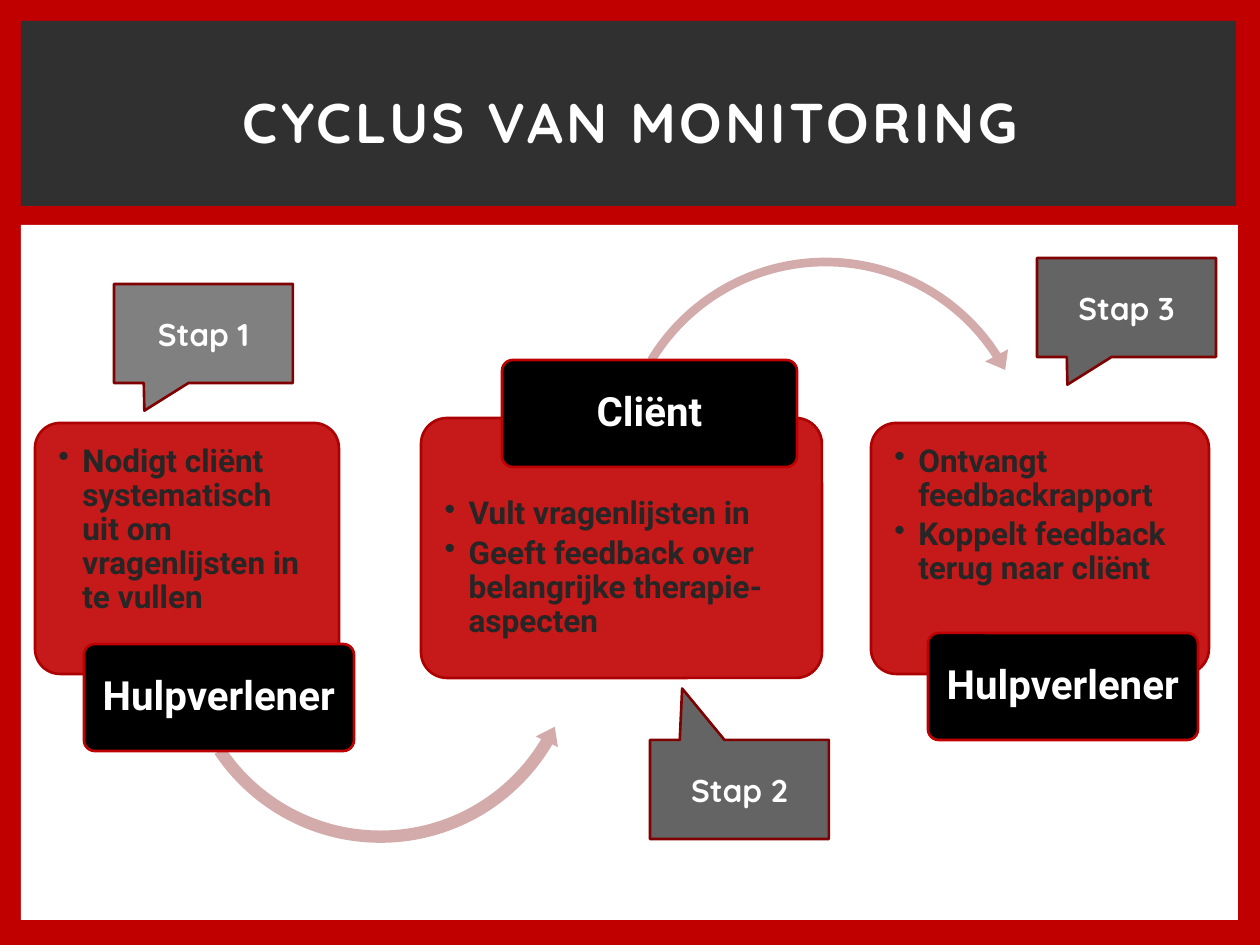
from lxml import etree
from pptx import Presentation
from pptx import util as u
from pptx.dml.color import RGBColor
from pptx.enum import shapes, text
from pptx.oxml.ns import qn

EMU_PER_PX = 914400 / 126

RED = RGBColor(0xC0, 0x00, 0x00)
PANEL_EDGE = RGBColor(0xAD, 0x01, 0x01)
CALLOUT_EDGE = RGBColor(0x80, 0x01, 0x01)
PINK = RGBColor(0xD3, 0xAB, 0xAB)
WHITE = RGBColor(0xFF, 0xFF, 0xFF)
BLACK = RGBColor(0x00, 0x00, 0x00)
CHARCOAL = RGBColor(0x30, 0x30, 0x30)
INK = RGBColor(0x26, 0x26, 0x26)
GREY = RGBColor(0x80, 0x80, 0x80)
DARK_GREY = RGBColor(0x64, 0x64, 0x64)

HEADING_FONT = "Quicksand"
BODY_FONT = "Roboto"
SHAPE = shapes.MSO_SHAPE


def px(length):
    return u.Emu(round(length * EMU_PER_PX))


class CycleSlide:
    def __init__(self, slide):
        self.slide = slide
        slide.background.fill.solid()
        slide.background.fill.fore_color.rgb = RED

    def shape(self, preset, box, fill, edge=None, adjustments=()):
        item = self.slide.shapes.add_shape(preset, *map(px, box))
        item.shadow.inherit = False
        item.fill.solid()
        item.fill.fore_color.rgb = fill
        if edge is None:
            item.line.fill.background()
        else:
            item.line.color.rgb = edge
            item.line.width = u.Pt(1.5)
        for index, value in enumerate(adjustments):
            item.adjustments[index] = value
        return item

    def label(self, item, lines, font, size, color, insets=(6, 4, 6, 4),
              align=text.PP_ALIGN.CENTER, anchor=text.MSO_ANCHOR.MIDDLE):
        """Fill a shape with one paragraph per line and return the paragraphs."""
        frame = item.text_frame
        frame.word_wrap = True
        frame.vertical_anchor = anchor
        (frame.margin_left, frame.margin_top,
         frame.margin_right, frame.margin_bottom) = map(px, insets)
        frame.text = "\n".join(lines)
        for paragraph in frame.paragraphs:
            paragraph.alignment = align
            paragraph.font.name = font
            paragraph.font.size = u.Pt(size)
            paragraph.font.bold = True
            paragraph.font.color.rgb = color
        return frame.paragraphs

    def title(self, box, words):
        item = self.slide.shapes.add_textbox(*map(px, box))
        heading, = self.label(item, [words], HEADING_FONT, 32, WHITE)
        heading.font._rPr.set("spc", "200")

    def panel(self, box, tasks, top_inset=15):
        """Draw a translucent red panel with a bulleted task list."""
        item = self.shape(SHAPE.ROUNDED_RECTANGLE, box, RED, PANEL_EDGE, [0.1])
        color = item.fill._xPr.find(qn("a:solidFill")).find(qn("a:srgbClr"))
        etree.SubElement(color, qn("a:alpha"), val="90000")
        paragraphs = self.label(item, tasks, BODY_FONT, 18, INK, (16, top_inset, 16, 15),
                                text.PP_ALIGN.LEFT, text.MSO_ANCHOR.TOP)
        for paragraph in paragraphs:
            paragraph.line_spacing = 0.9
            paragraph.space_after = u.Pt(3)
            properties = paragraph._p.get_or_add_pPr()
            properties.set("marL", str(px(24)))
            properties.set("indent", str(-px(24)))
            bullet = etree.Element(qn("a:buChar"), char="•")
            properties.find(qn("a:defRPr")).addprevious(bullet)

    def role(self, box, name):
        item = self.shape(SHAPE.ROUNDED_RECTANGLE, box, BLACK, RED, [0.1])
        caption, = self.label(item, [name], BODY_FONT, 23, WHITE)
        caption.line_spacing = 0.9

    def arc(self, preset, box, adjustments):
        self.shape(preset, box, PINK, adjustments=adjustments)

    def step(self, left, top, number, fill, pointer):
        item = self.shape(SHAPE.RECTANGULAR_CALLOUT, (left, top, 179, 99),
                          fill, CALLOUT_EDGE, pointer)
        self.label(item, [f"Stap {number}"], HEADING_FONT, 18, WHITE)


def main():
    deck = Presentation()
    deck.slide_width, deck.slide_height = px(1260), px(945)
    cycle = CycleSlide(deck.slides.add_slide(deck.slide_layouts[6]))

    cycle.shape(SHAPE.RECTANGLE, (21, 225, 1217, 695), WHITE)
    cycle.shape(SHAPE.RECTANGLE, (21, 21, 1215, 185), CHARCOAL)
    cycle.title((53, 49, 1155, 145), "CYCLUS VAN MONITORING")

    cycle.panel((35, 423, 304, 251),
                ["Nodigt cliënt systematisch uit om vragenlijsten in te vullen"])
    cycle.arc(SHAPE.LEFT_CIRCULAR_ARROW, (175, 438, 411, 411),
              (0.03, 3.03, 18.35, 87.81, 0.03))
    cycle.role((84, 644, 270, 107), "Hulpverlener")

    cycle.panel((421, 418, 401, 260),
                ["Vult vragenlijsten in",
                 "Geeft feedback over belangrijke therapie-aspecten"], top_inset=72)
    cycle.arc(SHAPE.CIRCULAR_ARROW, (609, 249, 433, 433),
              (0.02, 2.86, 196.33, 126.69, 0.03))
    cycle.role((502, 360, 295, 107), "Cliënt")

    cycle.panel((871, 423, 338, 251),
                ["Ontvangt feedbackrapport", "Koppelt feedback terug naar cliënt"])
    cycle.role((928, 633, 270, 107), "Hulpverlener")

    pointer_down, pointer_up = (-0.33, 0.78), (-0.32, -1.02)
    cycle.step(114, 284, 1, GREY, pointer_down)
    cycle.step(650, 740, 2, DARK_GREY, pointer_up)
    cycle.step(1037, 258, 3, DARK_GREY, pointer_down)

    deck.save("out.pptx")


if __name__ == "__main__":
    main()
